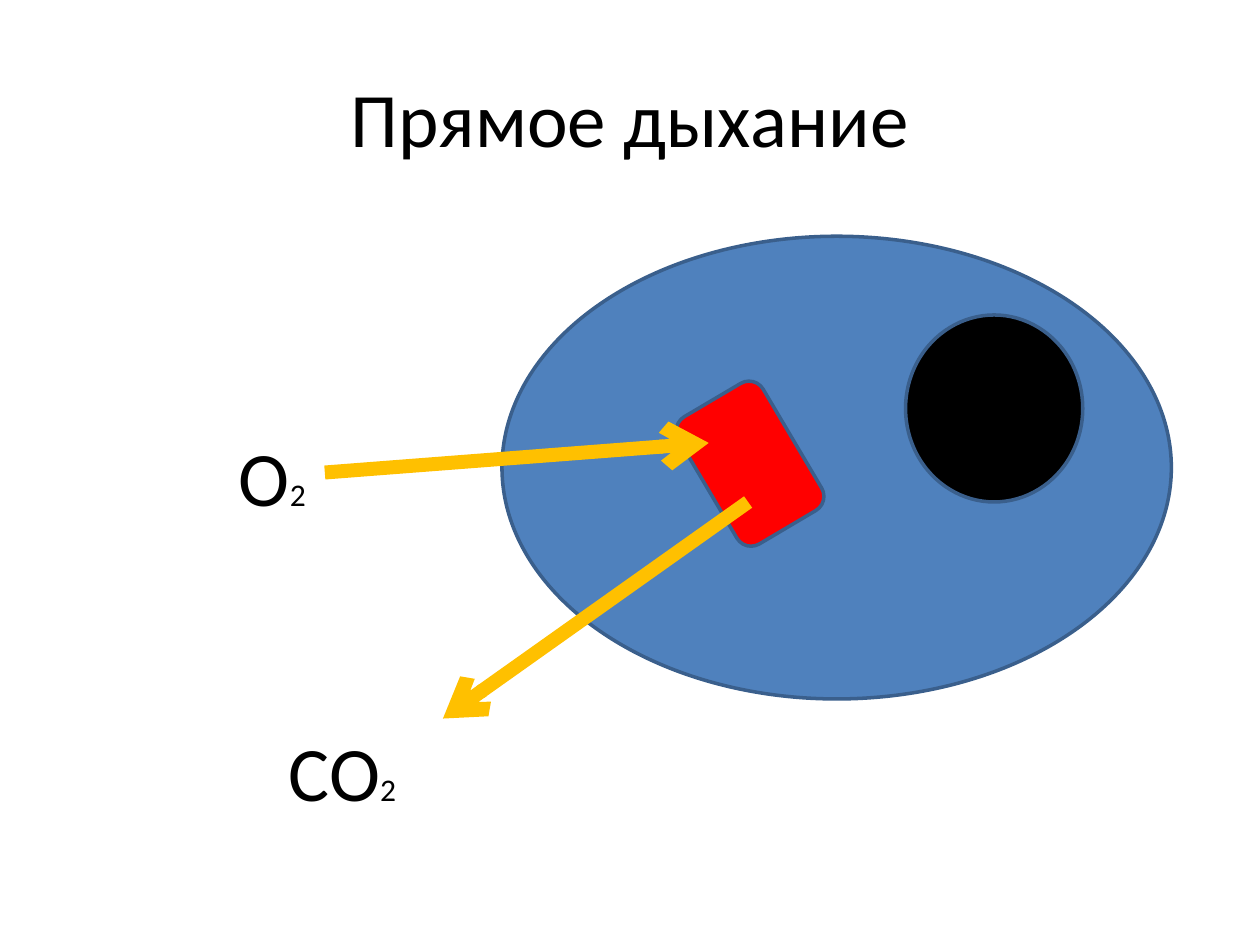
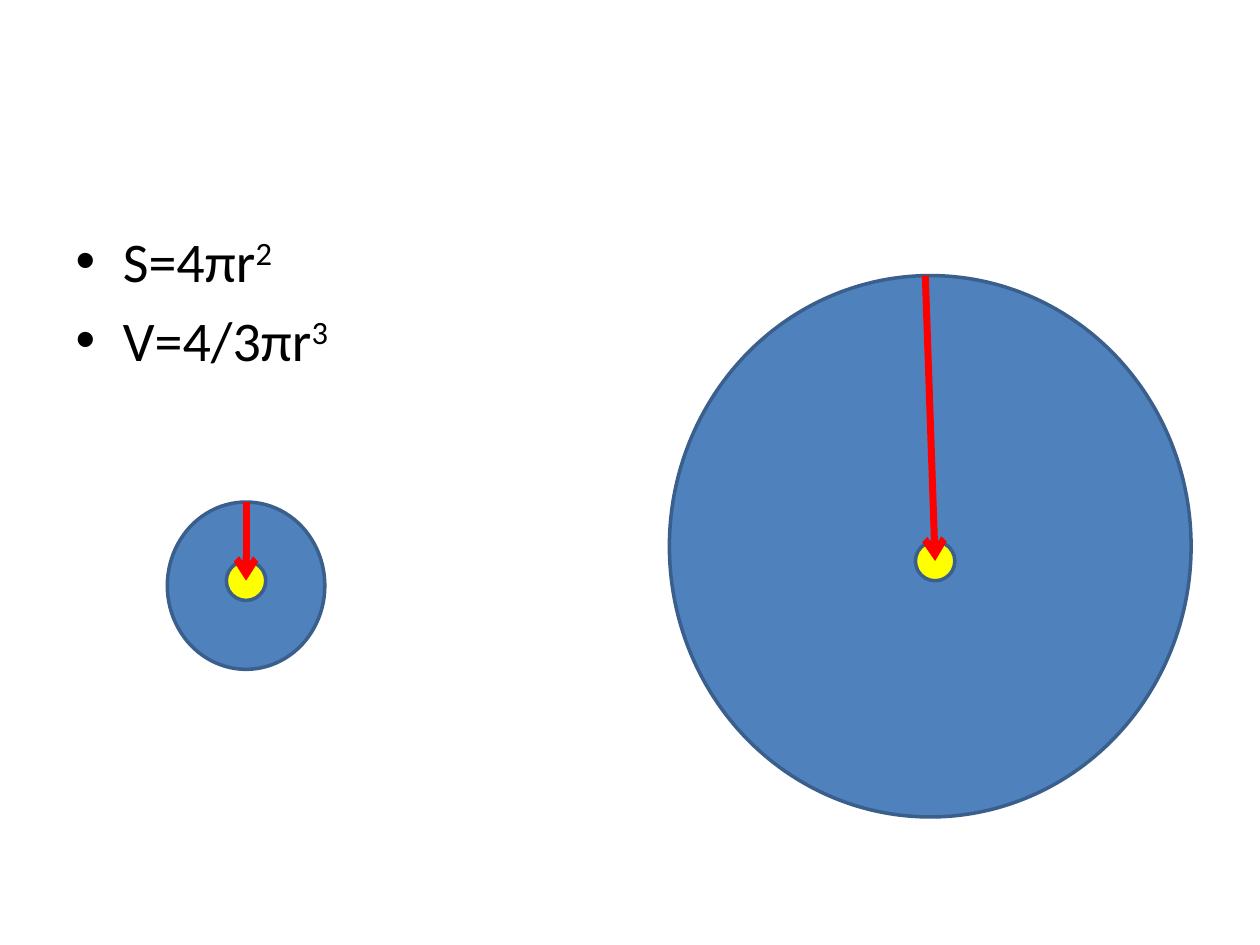
"""Builds two slides on direct respiration and the surface and volume of a cell."""
from lxml.etree import SubElement as Sub
from pptx import Presentation
from pptx.dml.color import RGBColor
from pptx.enum.shapes import MSO_CONNECTOR as Link, MSO_SHAPE as Form
from pptx.enum.text import MSO_ANCHOR as Anchor, MSO_AUTO_SIZE as Fit, PP_ALIGN as Align
from pptx.oxml.ns import qn
from pptx.util import Inches, Pt

BLUE = RGBColor(0x4F, 0x81, 0xBD)
EDGE = RGBColor(0x3A, 0x5F, 0x8C)
BLACK = RGBColor(0, 0, 0)
RED = RGBColor(0xFF, 0, 0)
GOLD = RGBColor(0xFF, 0xC0, 0)
YELLOW = RGBColor(0xFF, 0xFF, 0)

deck = Presentation()
deck.slide_width, deck.slide_height = Inches(10), Inches(7.5)
UNIT = deck.slide_width / 64
SIDES = ("left", "top", "width", "height")
BIG = {"name": "Calibri", "size": Pt(44)}
MID = {"name": "Calibri", "size": Pt(32)}
SMALL = {"name": "Calibri", "size": Pt(18)}


def grid(*cells):
    return [round(cell * UNIT) for cell in cells]


def write(para, text, style):
    run = para.add_run()
    run.text = text
    for key, value in style.items():
        setattr(run.font, key, value)
    run.font.color.rgb = BLACK
    return run


gas = deck.slides.add_slide(deck.slide_layouts[5])
size = deck.slides.add_slide(deck.slide_layouts[1])

title = gas.shapes.title
for side, value in zip(SIDES, grid(3.2, 1.92, 57.6, 8)):
    setattr(title, side, value)
title.text_frame.vertical_anchor = Anchor.MIDDLE
head = title.text_frame.paragraphs[0]
head.alignment = Align.CENTER
write(head, "Прямое дыхание", BIG)

blank = size.shapes.title.element
blank.getparent().remove(blank)
body = size.placeholders[1]
for side, value in zip(SIDES, grid(3.2, 11.2, 57.6, 31.7)):
    setattr(body, side, value)
for row, (base, power) in enumerate([("S=4πr", "2"), ("V=4/3πr", "3")]):
    frame = body.text_frame
    para = frame.add_paragraph() if row else frame.paragraphs[0]
    write(para, base, MID)
    write(para, power, MID).font._element.set("baseline", "30000")

for slide, form, cells, fill, turn in [
    (gas, Form.OVAL, (25.5, 12, 34, 23.5), BLUE, 0),
    (gas, Form.OVAL, (46, 16, 9, 9.5), BLACK, 0),
    (gas, Form.ROUNDED_RECTANGLE, (35.6, 19.8, 5, 7.5), RED, 329.4),
    (size, Form.OVAL, (34, 14, 26.5, 27.5), BLUE, 0),
    (size, Form.OVAL, (46.5, 27.5, 2, 2), YELLOW, 0),
    (size, Form.OVAL, (8.5, 25.5, 8, 8.5), BLUE, 0),
    (size, Form.OVAL, (11.5, 28.5, 2, 2), YELLOW, 0),
]:
    part = slide.shapes.add_shape(form, *grid(*cells))
    part.shadow.inherit = False
    part.rotation = turn
    part.fill.solid()
    part.fill.fore_color.rgb = fill
    part.line.color.rgb = EDGE
    part.line.width = Pt(2)

for slide, ends, color, width in [
    (gas, (16.5, 24, 36, 22.5), GOLD, 8),
    (gas, (38, 25.5, 22.5, 36.5), GOLD, 8),
    (size, (12.5, 25.5, 12.5, 29.5), RED, 4),
    (size, (47, 14, 47.5, 28.5), RED, 4),
]:
    arrow = slide.shapes.add_connector(Link.STRAIGHT, *grid(*ends))
    arrow.line.color.rgb = color
    arrow.line.width = Pt(width)
    Sub(arrow.line._get_or_add_ln(), qn("a:tailEnd"), type="arrow")
    Sub(arrow.element.spPr, qn("a:effectLst"))

for text, cells in [("О", (11.5, 21.5, 5.5, 5.4)), ("СО", (14, 36.5, 8, 5.4))]:
    frame = gas.shapes.add_textbox(*grid(*cells)).text_frame
    frame.word_wrap = True
    frame.auto_size = Fit.SHAPE_TO_FIT_TEXT
    write(frame.paragraphs[0], text, BIG)
    write(frame.paragraphs[0], "2", SMALL)

deck.save("out.pptx")
